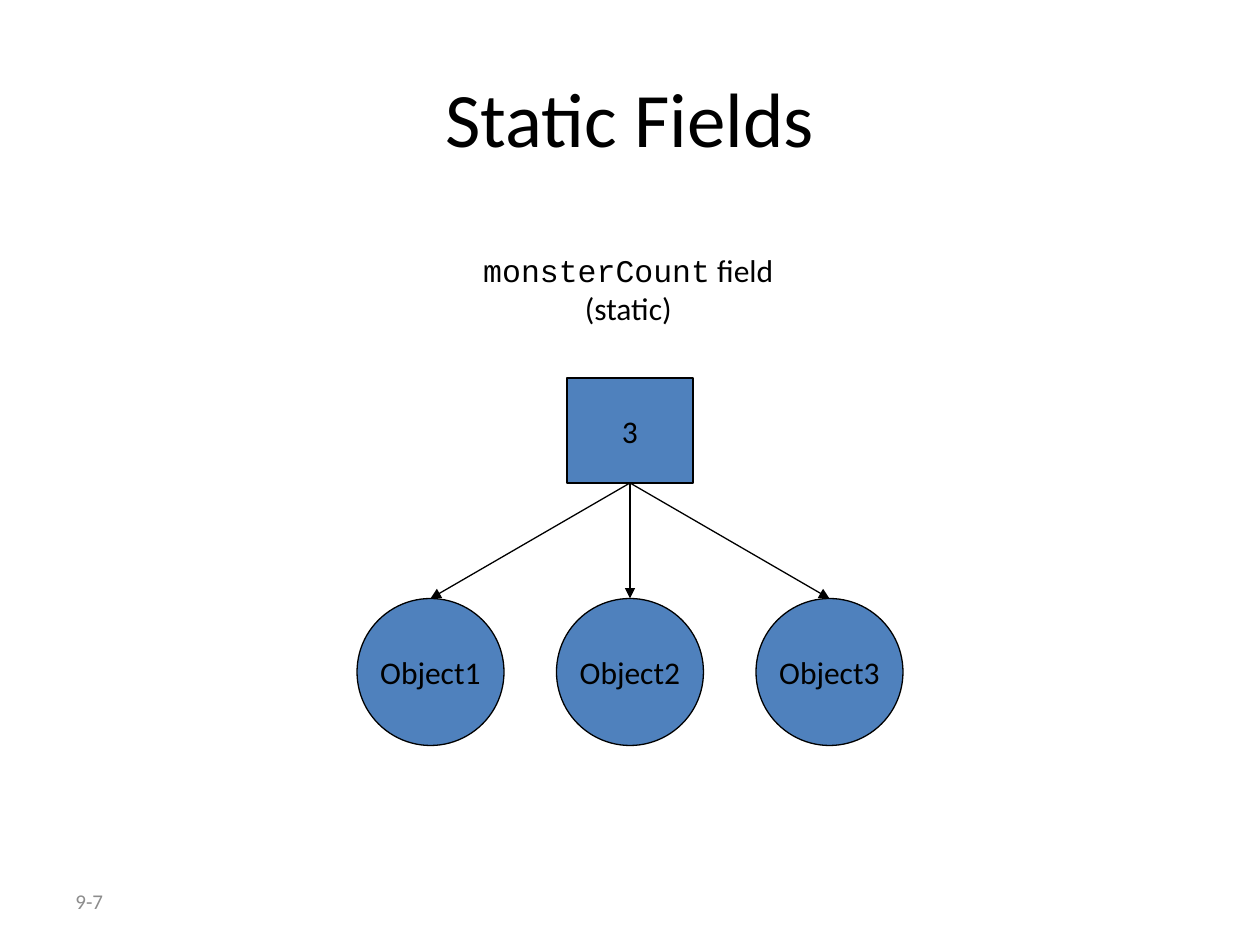
from dataclasses import dataclass

from lxml import etree
from pptx import Presentation
from pptx import util as u
from pptx.dml.color import RGBColor
from pptx.enum import shapes, text
from pptx.oxml.ns import qn

Pt = u.Pt


@dataclass(frozen=True)
class Theme:
    ink: str = "000000"
    node: str = "4F81BD"
    muted: str = "8C8C8C"
    body_font: str = "Calibri"
    code_font: str = "Courier New"
    title_size: int = 44
    body_size: int = 18
    footer_size: int = 12
    line_width: float = 0.75


THEME = Theme()
CENTER = text.PP_ALIGN.CENTER
MIDDLE = text.MSO_ANCHOR.MIDDLE


def set_all(target, values):
    for attribute, value in values.items():
        setattr(target, attribute, value)


def place(part, box):
    set_all(part, dict(zip(("left", "top", "width", "height"), map(Pt, box))))


def write(part, lines, size=THEME.body_size, color=THEME.ink,
          align=CENTER, anchor=MIDDLE, wrap=False):
    """Each line is a list of (words, font name) runs."""
    frame = part.text_frame
    set_all(frame, {"word_wrap": wrap, "vertical_anchor": anchor})
    for index, runs in enumerate(lines):
        paragraph = frame.add_paragraph() if index else frame.paragraphs[0]
        paragraph.alignment = align
        for words, font_name in runs:
            run = paragraph.add_run()
            run.text = words
            set_all(run.font, {"name": font_name, "size": Pt(size)})
            run.font.color.rgb = RGBColor.from_string(color)


def style_line(line):
    line.color.rgb = RGBColor.from_string(THEME.ink)
    line.width = Pt(THEME.line_width)


def add_title(slide, box):
    title = slide.shapes.title
    place(title, box)
    write(title, [[("Static Fields", THEME.body_font)]],
          size=THEME.title_size, wrap=True)


def add_page_number(slide, box):
    number = slide.shapes.add_textbox(*map(Pt, box))
    write(number, [[("9-7", THEME.body_font)]], size=THEME.footer_size,
          color=THEME.muted, align=text.PP_ALIGN.LEFT, wrap=True)


def add_node(group, kind, box, label):
    node = group.shapes.add_shape(kind, *map(Pt, box))
    node.shadow.inherit = False
    node.fill.solid()
    node.fill.fore_color.rgb = RGBColor.from_string(THEME.node)
    style_line(node.line)
    write(node, [[(label, THEME.body_font)]])
    return node


def add_arrow(group, source, target):
    arrow = group.shapes.add_connector(shapes.MSO_CONNECTOR.STRAIGHT, 0, 0, 0, 0)
    arrow.begin_connect(source, 2)  # bottom of the field
    arrow.end_connect(target, 0)    # top of the object
    style_line(arrow.line)
    etree.SubElement(arrow.line._get_or_add_ln(), qn("a:tailEnd"), type="triangle")
    etree.SubElement(arrow._element.spPr, qn("a:effectLst"))


def add_field_diagram(slide, box):
    left, top, width, height = box
    center = left + width / 2
    group = slide.shapes.add_group_shape()

    # Caption above the shared field
    caption_width = 182
    caption = group.shapes.add_textbox(
        *map(Pt, (center - caption_width / 2 - 1, top, caption_width, 51)))
    write(caption,
          [[("monsterCount", THEME.code_font), (" field", THEME.body_font)],
           [("(static)", THEME.body_font)]],
          anchor=text.MSO_ANCHOR.TOP)

    # Shared field
    field_width = 72
    field = add_node(group, shapes.MSO_SHAPE.RECTANGLE,
                     (center - field_width / 2, top + 76, field_width, 60), "3")

    # Evenly spaced objects along the bottom, each reached from the field
    diameter, count = 84, 3
    step = (width - diameter) / (count - 1)
    objects = [
        add_node(group, shapes.MSO_SHAPE.OVAL,
                 (left + i * step, top + height - diameter, diameter, diameter),
                 f"Object{i + 1}")
        for i in range(count)
    ]
    for instance in objects:
        add_arrow(group, field, instance)


def main():
    deck = Presentation()
    set_all(deck, {"slide_width": Pt(720), "slide_height": Pt(540)})
    slide = deck.slides.add_slide(deck.slide_layouts[5])
    add_page_number(slide, (36, 500.5, 168, 28.75))
    add_title(slide, (36, 21.6, 648, 90))
    add_field_diagram(slide, (204, 140, 312, 286))
    deck.save("out.pptx")


if __name__ == "__main__":
    main()
